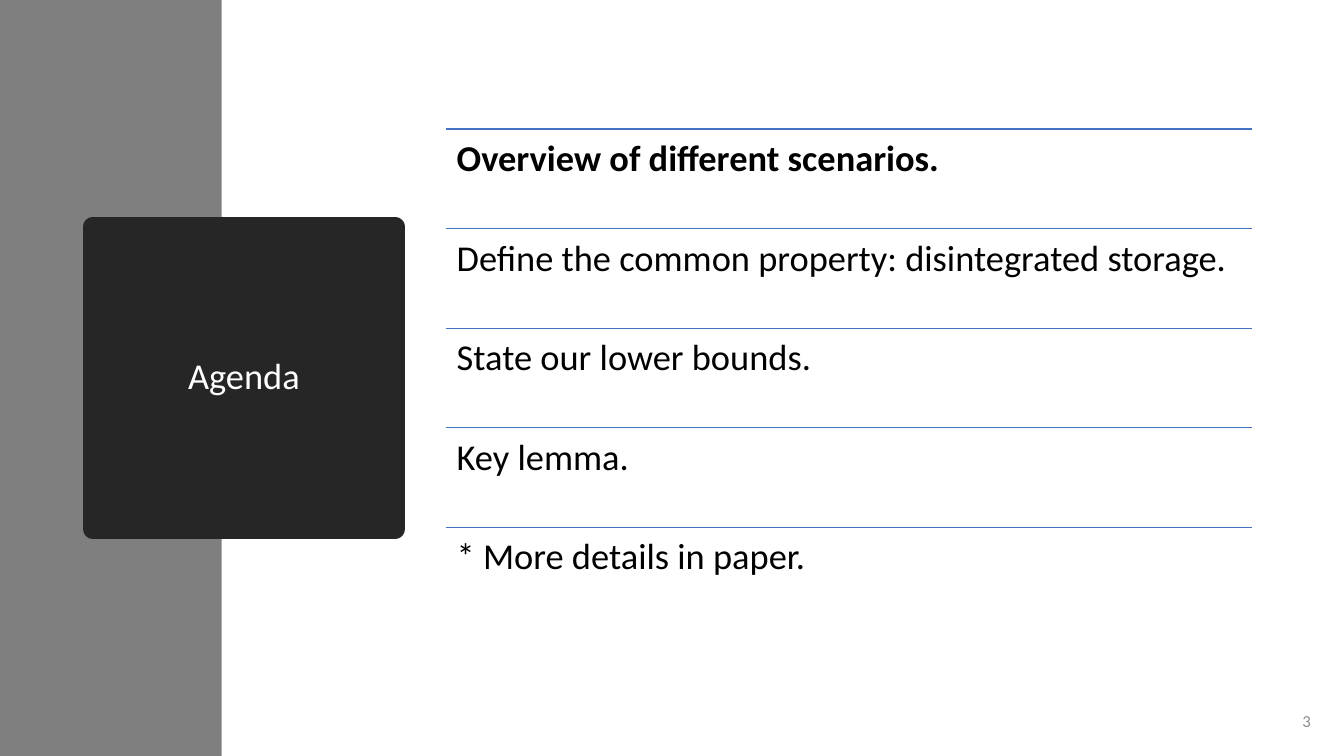
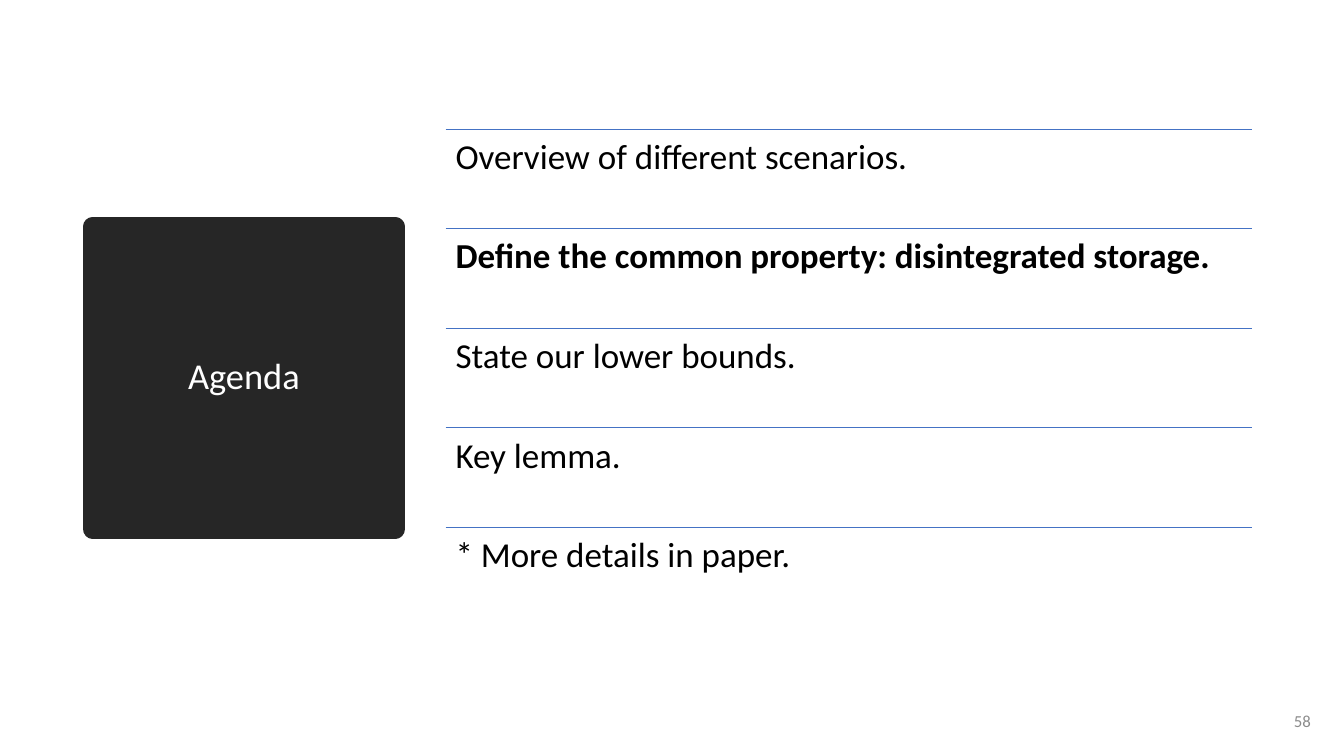
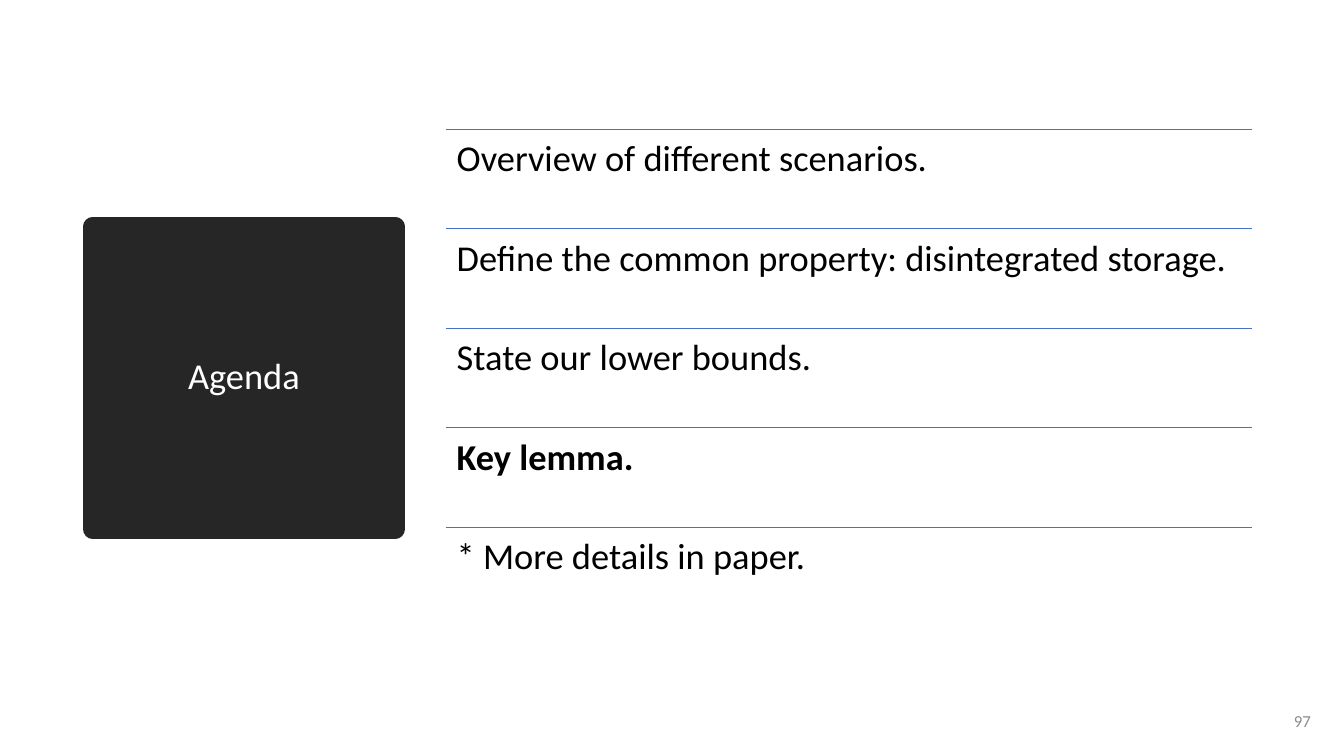
"""Build three agenda slides, each with its current topic in bold."""
from pptx import Presentation
from pptx.dml.color import RGBColor
from pptx.enum.shapes import MSO_CONNECTOR as CONN, MSO_SHAPE as SHAPE
from pptx.enum.text import MSO_ANCHOR as ANCHOR, PP_ALIGN as ALIGN
from pptx.oxml.ns import qn
from pptx.util import Inches, Pt
from lxml.etree import SubElement

TITLE = "Agenda"
TOPICS = [
    "Overview of different scenarios.",
    "Define the common property: disintegrated storage.",
    "State our lower bounds.",
    "Key lemma.",
    "* More details in paper.",
]
SLIDES = [
    dict(number=3, current=0, size=26, inset=0.11, rule=1, band=True),
    dict(number=58, current=1, size=25, inset=0.1, rule=0.5, band=False),
    dict(number=97, current=3, size=26, inset=0.11, rule=0.5, band=False),
]

FONT = "Calibri"
BLACK = RGBColor(0x00, 0x00, 0x00)
WHITE = RGBColor(0xFF, 0xFF, 0xFF)
DARK = RGBColor(0x26, 0x26, 0x26)
BAND = RGBColor(0x7F, 0x7F, 0x7F)
BLUE = RGBColor(0x44, 0x72, 0xC4)
MUTED = RGBColor(0x8C, 0x8C, 0x8C)

WIDTH, HEIGHT = 13.33, 7.5
BAND_WIDTH = 2.2
TITLE_LEFT, TITLE_SIDE, TITLE_BORDER = 0.92, 3, 13.75
LIST_LEFT, LIST_WIDTH = 4.42, 8
LIST_TOP, LIST_BOTTOM = 1.28, 6.22
ROW = (LIST_BOTTOM - LIST_TOP) / len(TOPICS)


def write(sp, text, *, size, color, bold=False, align=ALIGN.LEFT,
          anchor=ANCHOR.MIDDLE, spacing=1.0, inset=None):
    tf = sp.text_frame
    tf.word_wrap = True
    tf.vertical_anchor = anchor
    if inset is not None:
        tf.margin_left = tf.margin_right = Inches(inset)
        tf.margin_top = tf.margin_bottom = Inches(inset)
    p = tf.paragraphs[0]
    p.alignment = align
    p.line_spacing = spacing
    r = p.add_run()
    r.text = text
    r.font.name = FONT
    r.font.size = Pt(size)
    r.font.bold = bold
    r.font.color.rgb = color


def add_text(s, box, text, **fmt):
    sp = s.shapes.add_textbox(*map(Inches, box))
    write(sp, text, **fmt)


def add_rect(s, box, fill):
    sp = s.shapes.add_shape(SHAPE.RECTANGLE, *map(Inches, box))
    sp.shadow.inherit = False
    sp.fill.solid()
    sp.fill.fore_color.rgb = fill
    sp.line.fill.background()
    return sp


def add_rule(s, y, weight):
    ends = LIST_LEFT, y, LIST_LEFT + LIST_WIDTH, y
    cx = s.shapes.add_connector(CONN.STRAIGHT, *map(Inches, ends))
    cx.line.color.rgb = BLUE
    cx.line.width = Pt(weight)
    SubElement(cx._element.spPr, qn("a:effectLst"))


def add_title(s):
    top = (HEIGHT - TITLE_SIDE) / 2
    sp = add_rect(s, (TITLE_LEFT, top, TITLE_SIDE, TITLE_SIDE), DARK)
    sp.line.color.rgb = DARK
    sp.line.width = Pt(TITLE_BORDER)
    SubElement(sp.line._get_or_add_ln(), qn("a:round"))
    write(sp, TITLE, size=26, color=WHITE, align=ALIGN.CENTER, spacing=0.9)


def add_agenda(prs, number, current, size, inset, rule, band):
    s = prs.slides.add_slide(prs.slide_layouts[6])
    if band:
        add_rect(s, (0, 0, BAND_WIDTH, HEIGHT), BAND)
    add_title(s)
    for i, topic in enumerate(TOPICS):
        y = LIST_TOP + i * ROW
        add_rule(s, y, rule)
        add_text(s, (LIST_LEFT, y, LIST_WIDTH, ROW), topic, size=size,
                 color=BLACK, bold=i == current, anchor=ANCHOR.TOP,
                 spacing=0.9, inset=inset)
    add_text(s, (10.1, 6.95, 3, 0.4), str(number), size=12, color=MUTED,
             align=ALIGN.RIGHT)


def main():
    prs = Presentation()
    prs.slide_width, prs.slide_height = Inches(WIDTH), Inches(HEIGHT)
    for slide in SLIDES:
        add_agenda(prs, **slide)
    prs.save("out.pptx")


if __name__ == "__main__":
    main()
